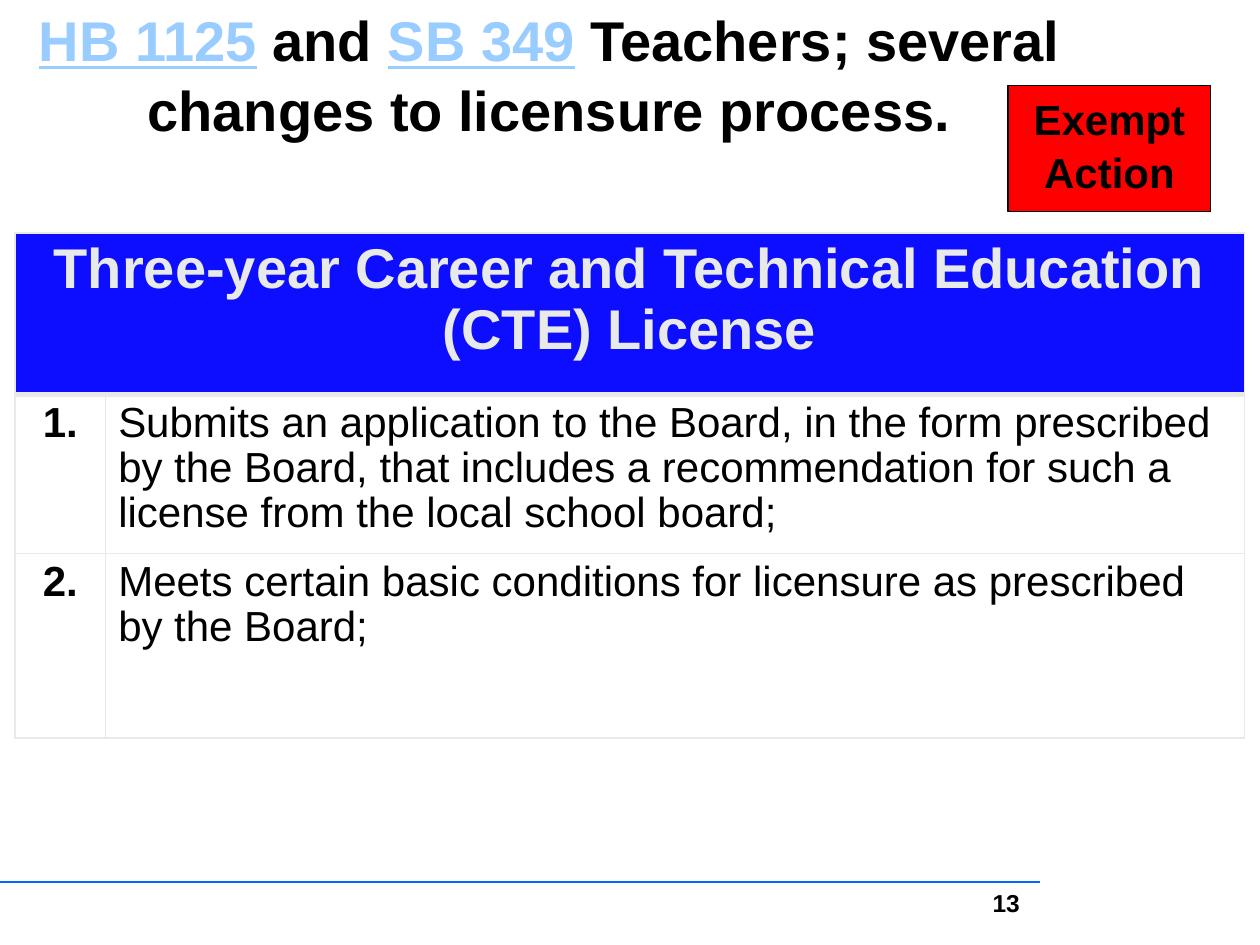
import pptx
import pptx.dml.color
import pptx.enum.shapes
import pptx.enum.text
import pptx.oxml
import pptx.oxml.ns
import pptx.util

Cm = pptx.util.Cm
Pt = pptx.util.Pt
ALIGN = pptx.enum.text.PP_ALIGN
ANCHOR = pptx.enum.text.MSO_ANCHOR
COLORS = {
    "text": "000000",
    "bill": "99CCFF",
    "rule": "0066FF",
    "badge": "FF0000",
    "header": "0D0DFF",
    "pale": "E8EAE9",
}


def rgb(name):
    return pptx.dml.color.RGBColor.from_string(COLORS[name])


def style(paragraph, size, color="text", bold=True, align=ALIGN.CENTER, spacing=1.0):
    paragraph.alignment = align
    paragraph.line_spacing = spacing
    font = paragraph.font
    font.name, font.size, font.bold = "Arial", Pt(size), bold
    font.color.rgb = rgb(color)


deck = pptx.Presentation()
deck.slide_width, deck.slide_height = Cm(25.4), Cm(19.05)
page = deck.slides.add_slide(deck.slide_layouts[6])

# Footer rule
rule = page.shapes.add_connector(
    pptx.enum.shapes.MSO_CONNECTOR.STRAIGHT, Cm(20.96), Cm(17.78), Cm(0), Cm(17.78))
rule.line.color.rgb = rgb("rule")
rule.line.width = Pt(1.25)
rule._element.spPr.append(pptx.oxml.parse_xml(
    f"<a:effectLst {pptx.oxml.ns.nsdecls('a')}/>"))

# Title with underlined bill numbers
title = page.shapes.add_textbox(Cm(0), Cm(0), Cm(22.15), Cm(2.92))
title.text_frame.word_wrap = True
title.text_frame.vertical_anchor = ANCHOR.MIDDLE
heading = title.text_frame.paragraphs[0]
style(heading, 32, spacing=1.04)
for words, is_bill in [
    ("HB 1125", True),
    (" and ", False),
    ("SB 349", True),
    (" Teachers; several changes to licensure process.", False),
]:
    span = heading.add_run()
    span.text = words
    if is_bill:
        span.font.underline = True
        span.font.color.rgb = rgb("bill")

# License table
header = "Three-year Career and Technical Education (CTE) License"
conditions = [
    "Submits an application to the Board, in the form prescribed by the Board, "
    "that includes a recommendation for such a license from the local school board;",
    "Meets certain basic conditions for licensure as prescribed by the Board;",
]
table = page.shapes.add_table(3, 2, Cm(0.3), Cm(4.7), Cm(24.79), Cm(10.08)).table
table.first_row = table.horz_banding = False
for column, width in zip(table.columns, (1.83, 22.96)):
    column.width = Cm(width)
for row, height in zip(table.rows, (3.25, 3.12, 3.71)):
    row.height = Cm(height)
table.cell(0, 0).merge(table.cell(0, 1))

table.cell(0, 0).text = header
style(table.cell(0, 0).text_frame.paragraphs[0], 32, "pale", spacing=0.97)
for number, condition in enumerate(conditions, 1):
    label, body = table.cell(number, 0), table.cell(number, 1)
    label.text, body.text = f"{number}.", condition
    style(label.text_frame.paragraphs[0], 24, spacing=0.97)
    style(body.text_frame.paragraphs[0], 24, bold=False, align=ALIGN.LEFT, spacing=0.97)

# Cell fills and borders, heavier under the header
for index, row in enumerate(table.rows):
    for cell in row.cells:
        if index == 0:
            cell.fill.solid()
            cell.fill.fore_color.rgb = rgb("header")
        else:
            cell.fill.background()
        properties = cell._tc.get_or_add_tcPr()
        for place, side in enumerate("LRTB"):
            heavy = (index, side) in ((0, "B"), (1, "T"))
            properties.insert(place, pptx.oxml.parse_xml(
                f'<a:ln{side} {pptx.oxml.ns.nsdecls("a")} w="{Pt(3 if heavy else 1)}">'
                f'<a:solidFill><a:srgbClr val="{COLORS["pale"]}"/></a:solidFill>'
                f'</a:ln{side}>'))

# Page number
number_box = page.shapes.add_textbox(Cm(19.74), Cm(17.78), Cm(1.07), Cm(1.27))
number_box.text_frame.word_wrap = True
number_box.text_frame.text = "13"
style(number_box.text_frame.paragraphs[0], 14, align=ALIGN.RIGHT)

# Exempt Action badge
badge = page.shapes.add_shape(
    pptx.enum.shapes.MSO_SHAPE.RECTANGLE, Cm(20.32), Cm(1.73), Cm(4.09), Cm(2.54))
badge.shadow.inherit = False
badge.fill.solid()
badge.fill.fore_color.rgb = rgb("badge")
badge.line.color.rgb = rgb("text")
badge.line.width = Pt(0.75)
badge.text_frame.word_wrap = True
badge.text_frame.vertical_anchor = ANCHOR.TOP
badge.text_frame.text = "Exempt Action"
style(badge.text_frame.paragraphs[0], 24, spacing=1.04)

deck.save("out.pptx")
